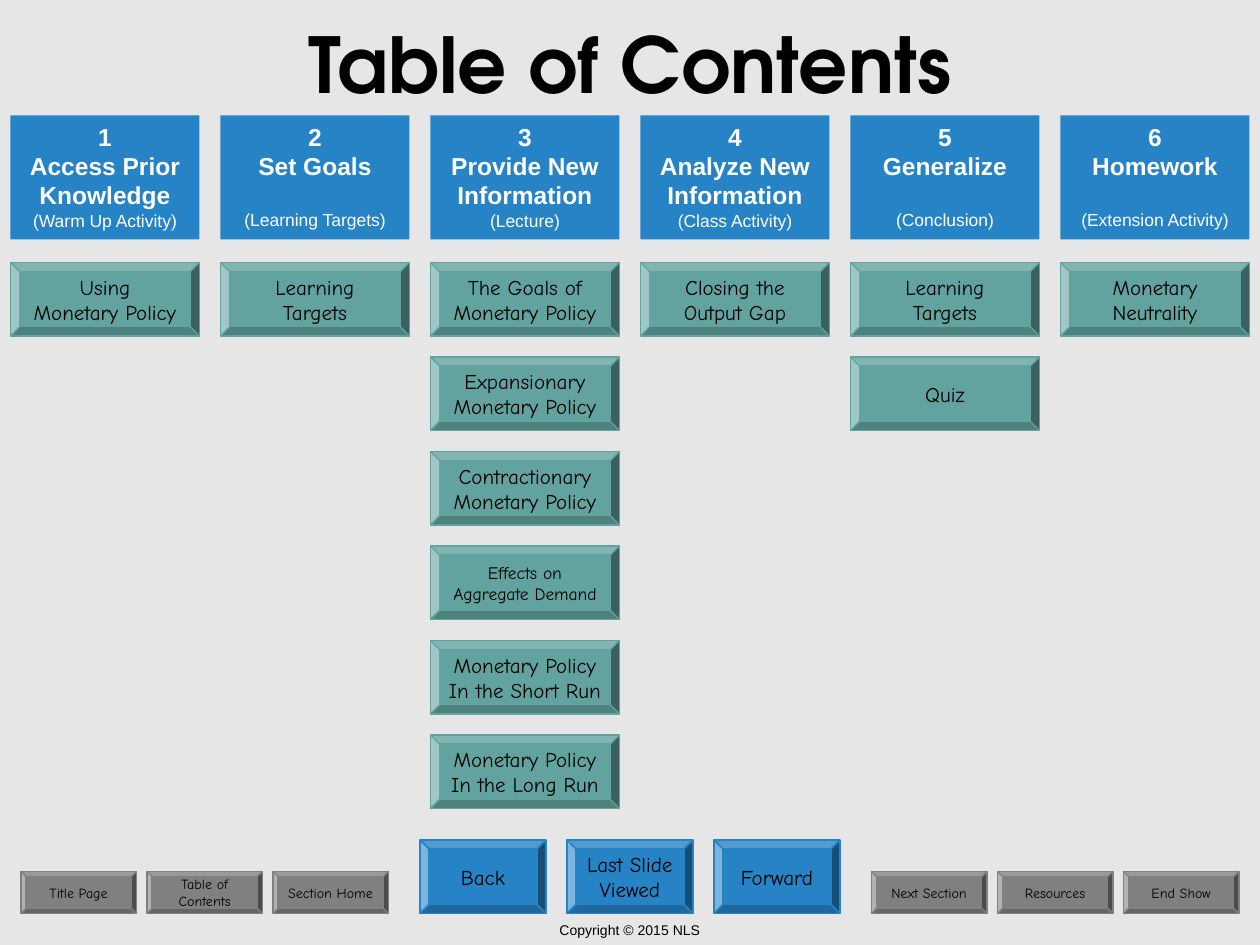
import pptx
import pptx.util
import pptx.dml.color
import pptx.enum.shapes
import pptx.enum.text

RGBColor = pptx.dml.color.RGBColor
SHAPES = pptx.enum.shapes.MSO_SHAPE
ANCHOR = pptx.enum.text.MSO_ANCHOR
AUTO_SIZE = pptx.enum.text.MSO_AUTO_SIZE
Pt = pptx.util.Pt

BACKGROUND = RGBColor(0xE6, 0xE6, 0xE6)
BLUE = RGBColor(0x26, 0x83, 0xC6)
TEAL = RGBColor(0x62, 0xA3, 0x9F)
GRAY = RGBColor(0x80, 0x80, 0x80)
BLACK = RGBColor(0x00, 0x00, 0x00)
WHITE = RGBColor(0xFF, 0xFF, 0xFF)

TITLE = "Table of Contents"
COPYRIGHT = "Copyright © 2015 NLS"
SECTIONS = [
    (["1", "Access Prior Knowledge"], "(Warm Up Activity)", 0,
     [("Using\nMonetary Policy", 12)]),
    (["2", "Set Goals"], "(Learning Targets)", 1,
     [("Learning\nTargets", 12)]),
    (["3", "Provide New", "Information"], "(Lecture)", 0,
     [("The Goals of\nMonetary Policy", 12),
      ("Expansionary\nMonetary Policy", 12),
      ("Contractionary\nMonetary Policy", 12),
      ("Effects on\nAggregate Demand", 10),
      ("Monetary Policy\nIn the Short Run", 12),
      ("Monetary Policy\nIn the Long Run", 12)]),
    (["4", "Analyze New", "Information"], "(Class Activity)", 0,
     [("Closing the\nOutput Gap", 12)]),
    (["5", "Generalize"], "(Conclusion)", 1,
     [("Learning\nTargets", 12), ("Quiz", 12)]),
    (["6", "Homework"], "(Extension Activity)", 1,
     [("Monetary\nNeutrality", 12)]),
]
LEFT_LINKS = ["Title Page", "Table of\nContents", "Section Home"]
RIGHT_LINKS = ["Next Section", "Resources", "End Show"]
MAIN_LINKS = ["Back", "Last Slide\nViewed", "Forward"]

SCALE = 914400 // 120
SLIDE_SIZE = (1200, 900)
MARGIN, COLUMN_PITCH, COLUMN_WIDTH = 10, 200, 180
HEADER_TOP, HEADER_HEIGHT = 110, 118
BUTTON_TOP, BUTTON_PITCH, BUTTON_HEIGHT = 250, 90, 70
EMPTY_LINE = Pt(16.1)

TITLE_FONT = {"name": "TeX Gyre Adventor", "size": Pt(44), "bold": True}
HEADING_FONT = {"name": "Arial", "size": Pt(14), "bold": True}
NOTE_FONT = {"name": "Arial", "size": Pt(10), "bold": False}
COPYRIGHT_FONT = {"name": "Arial", "size": Pt(8)}


def scaled(*lengths):
    return [length * SCALE for length in lengths]


def write(shape, lines, color):
    for index, (text, font) in enumerate(lines):
        frame = shape.text_frame
        paragraph = frame.add_paragraph() if index else frame.paragraphs[0]
        paragraph.alignment = pptx.enum.text.PP_ALIGN.CENTER
        run = paragraph.add_run()
        run.text = text
        for name, value in font.items():
            setattr(run.font, name, value)
        run.font.color.rgb = color


def add_block(slide, kind, box, fill):
    shape = slide.shapes.add_shape(kind, *scaled(*box))
    shape.shadow.inherit = False
    shape.fill.solid()
    shape.fill.fore_color.rgb = fill
    return shape


def add_button(slide, box, text, fill, size, line_width=0.75):
    shape = add_block(slide, SHAPES.BEVEL, box, fill)
    shape.line.color.rgb = fill
    shape.line.width = Pt(line_width)
    shape.text_frame.word_wrap = False
    shape.text_frame.vertical_anchor = ANCHOR.MIDDLE
    font = {"name": "Comic Neue", "size": Pt(size)}
    write(shape, [(line, font) for line in text.split("\n")], BLACK)


def add_button_row(slide, labels, left, top, pitch, width, height, *style):
    for index, label in enumerate(labels):
        add_button(slide, (left + index * pitch, top, width, height), label, *style)


def add_text(slide, box, text, font, anchor):
    shape = slide.shapes.add_textbox(*scaled(*box))
    shape.text_frame.word_wrap = True
    shape.text_frame.vertical_anchor = anchor
    write(shape, [(text, font)], BLACK)


def add_header(slide, left, heading, note, empty_lines):
    box = (left, HEADER_TOP, COLUMN_WIDTH, HEADER_HEIGHT)
    shape = add_block(slide, SHAPES.RECTANGLE, box, BLUE)
    shape.line.fill.background()
    frame = shape.text_frame
    frame.word_wrap = True
    frame.vertical_anchor = ANCHOR.TOP
    frame.auto_size = AUTO_SIZE.SHAPE_TO_FIT_TEXT
    write(shape, [(line, HEADING_FONT) for line in heading] + [(note, NOTE_FONT)], WHITE)
    if empty_lines:
        frame.paragraphs[-1].space_before = empty_lines * EMPTY_LINE


def main():
    presentation = pptx.Presentation()
    presentation.slide_width, presentation.slide_height = scaled(*SLIDE_SIZE)
    slide = presentation.slides.add_slide(presentation.slide_layouts[6])
    slide.background.fill.solid()
    slide.background.fill.fore_color.rgb = BACKGROUND

    add_text(slide, (0, 872, 1200, 28), COPYRIGHT, COPYRIGHT_FONT, ANCHOR.TOP)
    add_button_row(slide, MAIN_LINKS, 400, 800, 140, 120, 70, BLUE, 12, 1)
    for labels, left in ((LEFT_LINKS, 20), (RIGHT_LINKS, 830)):
        add_button_row(slide, labels, left, 830, 120, 110, 40, GRAY, 8)
    add_text(slide, (0, 0, 1200, 120), TITLE, TITLE_FONT, ANCHOR.MIDDLE)

    for column, (heading, note, empty_lines, topics) in enumerate(SECTIONS):
        left = MARGIN + column * COLUMN_PITCH
        add_header(slide, left, heading, note, empty_lines)
        for row, (topic, size) in enumerate(topics):
            top = BUTTON_TOP + row * BUTTON_PITCH
            add_button(slide, (left, top, COLUMN_WIDTH, BUTTON_HEIGHT), topic, TEAL, size)

    presentation.save("out.pptx")


if __name__ == "__main__":
    main()
